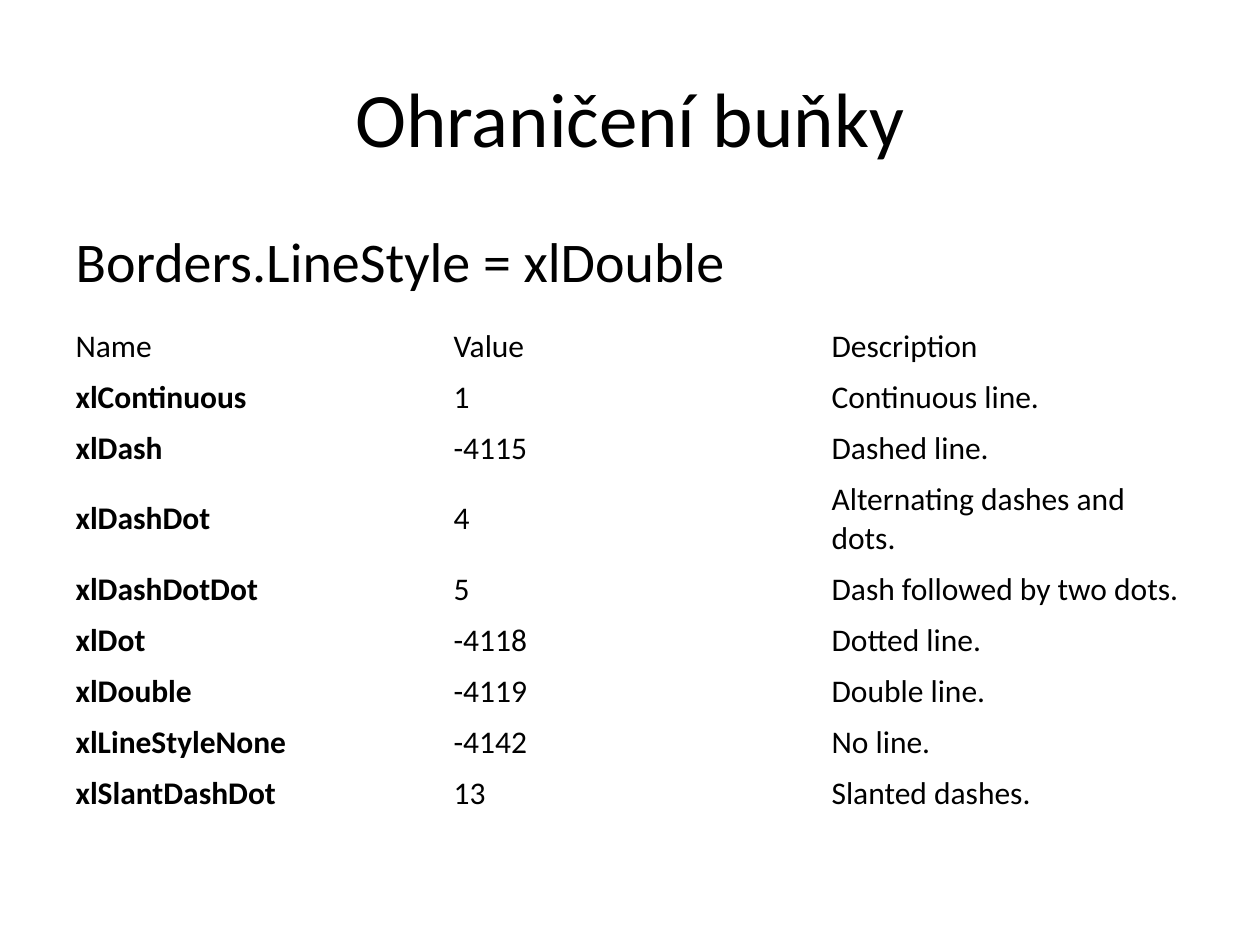
from dataclasses import dataclass

from lxml.etree import SubElement as Sub
from pptx import Presentation
from pptx.dml.color import RGBColor as RGB
from pptx.enum.text import MSO_ANCHOR as Anchor, PP_ALIGN as Align
from pptx.oxml.ns import qn
from pptx.util import Emu, Pt

SCALE = 914400 / 126  # EMU per px


@dataclass(frozen=True)
class Theme:
    font: str = "Calibri"
    ink: RGB = RGB(0, 0, 0)
    title: int = 44
    body: int = 32
    cell: int = 18


THEME = Theme()

STYLES = [
    ("Name", "Value", "Description"),
    ("xlContinuous", "1", "Continuous line."),
    ("xlDash", "-4115", "Dashed line."),
    ("xlDashDot", "4", "Alternating dashes and dots."),
    ("xlDashDotDot", "5", "Dash followed by two dots."),
    ("xlDot", "-4118", "Dotted line."),
    ("xlDouble", "-4119", "Double line."),
    ("xlLineStyleNone", "-4142", "No line."),
    ("xlSlantDashDot", "13", "Slanted dashes."),
]


def px(n):
    return Emu(round(n * SCALE))


def add_run(para, text, size, bold=False):
    run = para.add_run()
    run.text = text
    font = run.font
    font.name, font.size, font.bold = THEME.font, Pt(size), bold
    font.color.rgb = THEME.ink


def place(shape, left, top, width, height):
    shape.left, shape.top = px(left), px(top)
    shape.width, shape.height = px(width), px(height)


def set_title(slide, text):
    shape = slide.shapes.title
    place(shape, 63, 38, 1134, 157)
    frame = shape.text_frame
    frame.vertical_anchor = Anchor.MIDDLE
    para = frame.paragraphs[0]
    para.alignment = Align.CENTER
    add_run(para, text, THEME.title)


def set_body(slide, text):
    shape = slide.placeholders[1]
    place(shape, 63, 220, 1134, 624)
    para = shape.text_frame.paragraphs[0]
    # Plain line: no bullet and no hanging indent
    props = para._p.get_or_add_pPr()
    props.set("marL", "0")
    props.set("indent", "0")
    Sub(props, qn("a:buNone"))
    add_run(para, text, THEME.body)


def add_grid(slide, rows, left, top, width, step):
    shape = slide.shapes.add_table(
        len(rows), len(rows[0]), px(left), px(top),
        px(width), px(step * len(rows)))
    table = shape.table
    table.first_row = table.horz_banding = False
    for r, row in enumerate(rows):
        for c, text in enumerate(row):
            cell = table.cell(r, c)
            cell.fill.background()
            cell.vertical_anchor = Anchor.MIDDLE
            # Constant names are bold, below the heading row
            bold = r > 0 and c == 0
            add_run(cell.text_frame.paragraphs[0], text, THEME.cell, bold)


def main():
    deck = Presentation()
    deck.slide_width, deck.slide_height = px(1260), px(945)
    slide = deck.slides.add_slide(deck.slide_layouts[1])

    # Heading and sample statement
    set_title(slide, "Ohraničení buňky")
    set_body(slide, "Borders.LineStyle = xlDouble")

    # Line style constants
    add_grid(slide, STYLES, 63, 321, 1134, 51)

    deck.save("out.pptx")


if __name__ == "__main__":
    main()
